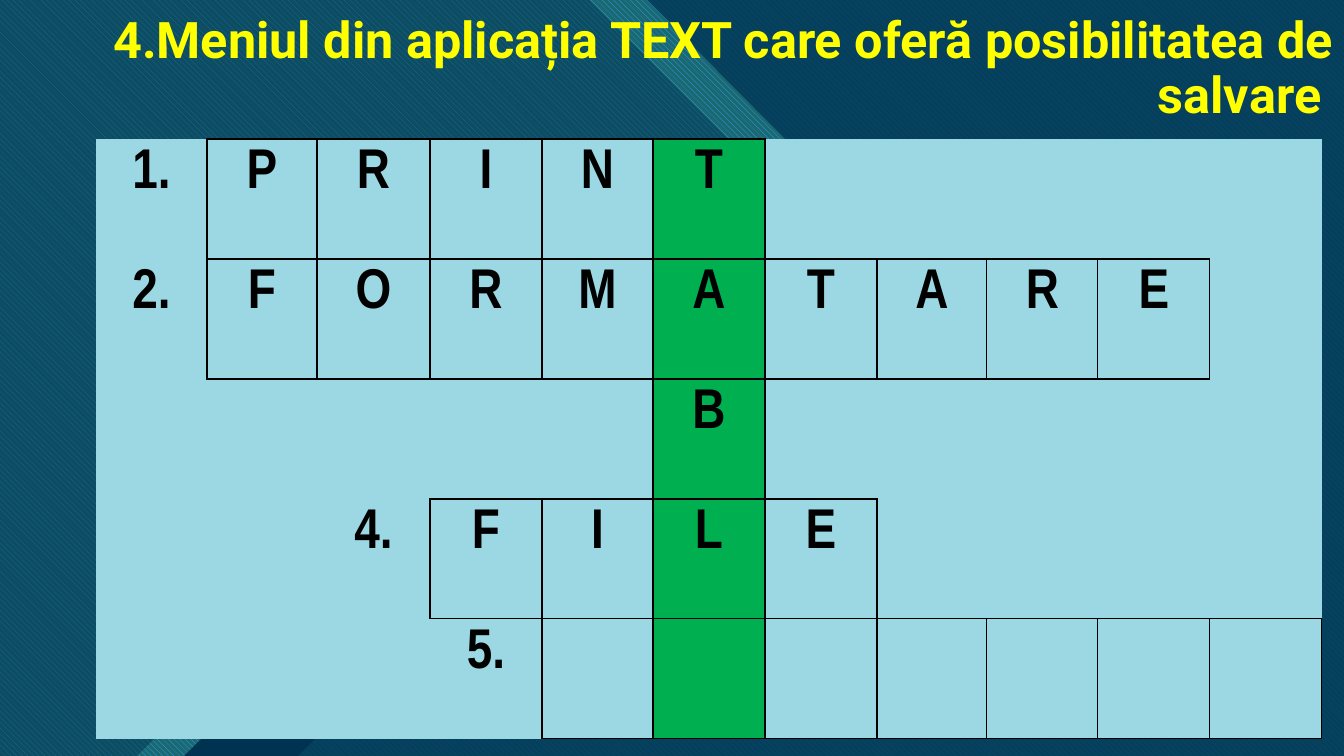
import pptx
import pptx.util
import pptx.oxml
import pptx.oxml.ns
import pptx.dml.color
import pptx.enum.dml
import pptx.enum.text
from dataclasses import dataclass
from typing import Optional

EMU_PER_PX = 12192000 / 1344
WIDTH, HEIGHT = 1344, 756
PATTERN = pptx.enum.dml.MSO_PATTERN
ALIGN = pptx.enum.text.PP_ALIGN


@dataclass(frozen=True)
class Theme:
    navy: str = "003352"
    blue: str = "0065A4"
    sky: str = "2FAFFF"
    aqua: str = "47C3D3"
    teal: str = "1B6872"
    cell: str = "9CD8E3"
    key: str = "00B050"
    ink: str = "000000"
    title: str = "FFFF00"
    title_font: str = "Roboto"
    grid_font: str = "Arial Narrow"
    title_pt: int = 36
    grid_pt: int = 40
    border_pt: int = 1


@dataclass(frozen=True)
class Panel:
    points: tuple[tuple[int, int], ...]
    color: str
    back: Optional[str] = None
    opacity: int = 100


@dataclass(frozen=True)
class Word:
    label: str
    start: int
    length: int
    letters: str = ""


THEME = Theme()
PAGE = ((0, 0), (WIDTH, 0), (WIDTH, HEIGHT), (0, HEIGHT))
PANELS = (
    Panel(PAGE, THEME.blue, back=THEME.aqua),
    Panel(PAGE, THEME.navy, opacity=90),
    Panel(((21, 91), (669, 91), (816, 238), (298, 756), (21, 756)), THEME.navy),
    Panel(((0, 0), (647, 0), (793, 147), (184, 756), (0, 756)), THEME.sky, back=THEME.teal),
    Panel(((0, 0), (589, 0), (741, 152), (137, 756), (0, 756)), THEME.navy, opacity=51),
)
WORDS = (
    Word("1.", 1, 5, "PRINT"),
    Word("2.", 1, 9, "FORMATARE"),
    Word("", 5, 1, "B"),
    Word("4.", 3, 4, "FILE"),
    Word("5.", 4, 7),
)
KEY_COLUMN = 5
COLUMN_WIDTHS = (111, 110, 113, 112, 111, 112, 112, 110, 111, 112, 112)
ROW_HEIGHT = 120
GRID_LEFT, GRID_TOP = 96, 139


def px(value: int) -> int:
    return round(value * EMU_PER_PX)


def rgb(color: str) -> pptx.dml.color.RGBColor:
    return pptx.dml.color.RGBColor.from_string(color)


def style_text(p, font: str, size: int, color: str) -> None:
    for r in p.runs:
        r.font.name = font
        r.font.size = pptx.util.Pt(size)
        r.font.bold = True
        r.font.color.rgb = rgb(color)


def draw_panel(s, panel: Panel) -> None:
    first, *rest = panel.points
    builder = s.shapes.build_freeform(*first, scale=EMU_PER_PX)
    builder.add_line_segments(rest, close=True)
    sp = builder.convert_to_shape()
    sp.shadow.inherit = False
    sp.line.fill.background()
    if panel.back:
        sp.fill.patterned()
        sp.fill.pattern = PATTERN.WIDE_DOWNWARD_DIAGONAL
        sp.fill.fore_color.rgb = rgb(panel.color)
        sp.fill.back_color.rgb = rgb(panel.back)
        return
    sp.fill.solid()
    sp.fill.fore_color.rgb = rgb(panel.color)
    if panel.opacity < 100:
        clr = sp.element.spPr.find(".//" + pptx.oxml.ns.qn("a:srgbClr"))
        clr.append(pptx.oxml.parse_xml(
            f'<a:alpha {pptx.oxml.ns.nsdecls("a")} val="{panel.opacity * 1000}"/>'))


def boxed(row: int, col: int) -> bool:
    if not 0 <= row < len(WORDS):
        return False
    word = WORDS[row]
    return word.start <= col < word.start + word.length


def set_borders(cell, row: int, col: int) -> None:
    neighbours = {"L": (row, col - 1), "R": (row, col + 1),
                  "T": (row - 1, col), "B": (row + 1, col)}
    width = pptx.util.Pt(THEME.border_pt)
    tcPr = cell._tc.get_or_add_tcPr()
    for side, neighbour in neighbours.items():
        shown = boxed(row, col) or boxed(*neighbour)
        fill = (f'<a:solidFill><a:srgbClr val="{THEME.ink}"/></a:solidFill>'
                if shown else "<a:noFill/>")
        tcPr.append(pptx.oxml.parse_xml(
            f'<a:ln{side} {pptx.oxml.ns.nsdecls("a")} w="{width}">{fill}</a:ln{side}>'))


def cell_text(word: Word, col: int) -> str:
    if col == word.start - 1:
        return word.label
    index = col - word.start
    return word.letters[index] if 0 <= index < len(word.letters) else ""


def draw_crossword(s) -> None:
    frame = s.shapes.add_table(
        len(WORDS), len(COLUMN_WIDTHS), px(GRID_LEFT), px(GRID_TOP),
        px(sum(COLUMN_WIDTHS)), px(ROW_HEIGHT * len(WORDS)))
    table = frame.table
    table.first_row = False
    table.horz_banding = False
    for column, width in zip(table.columns, COLUMN_WIDTHS):
        column.width = px(width)
    for row, word in enumerate(WORDS):
        table.rows[row].height = px(ROW_HEIGHT)
        for col in range(len(COLUMN_WIDTHS)):
            cell = table.cell(row, col)
            cell.margin_left = cell.margin_right = px(7)
            cell.margin_top = cell.margin_bottom = px(5)
            set_borders(cell, row, col)
            cell.fill.solid()
            cell.fill.fore_color.rgb = rgb(THEME.key if col == KEY_COLUMN else THEME.cell)
            p = cell.text_frame.paragraphs[0]
            p.text = cell_text(word, col)
            p.alignment = ALIGN.CENTER
            p.line_spacing = 1.07
            style_text(p, THEME.grid_font, THEME.grid_pt, THEME.ink)


def draw_title(s, text: str) -> None:
    sp = s.shapes.title
    sp.element.getparent().append(sp.element)
    sp.left, sp.top, sp.width, sp.height = px(40), px(0), px(1304), px(139)
    tf = sp.text_frame
    tf.text = text
    tf.word_wrap = True
    tf.auto_size = pptx.enum.text.MSO_AUTO_SIZE.NONE
    tf.vertical_anchor = pptx.enum.text.MSO_ANCHOR.MIDDLE
    p = tf.paragraphs[0]
    p.alignment = ALIGN.RIGHT
    p.line_spacing = 0.9
    style_text(p, THEME.title_font, THEME.title_pt, THEME.title)


def main() -> None:
    prs = pptx.Presentation()
    prs.slide_width, prs.slide_height = px(WIDTH), px(HEIGHT)
    s = prs.slides.add_slide(prs.slide_layouts.get_by_name("Title Only"))
    for panel in PANELS:
        draw_panel(s, panel)
    draw_crossword(s)
    draw_title(s, "4.Meniul din aplicația TEXT care oferă posibilitatea de salvare ")
    prs.save("out.pptx")


if __name__ == "__main__":
    main()
